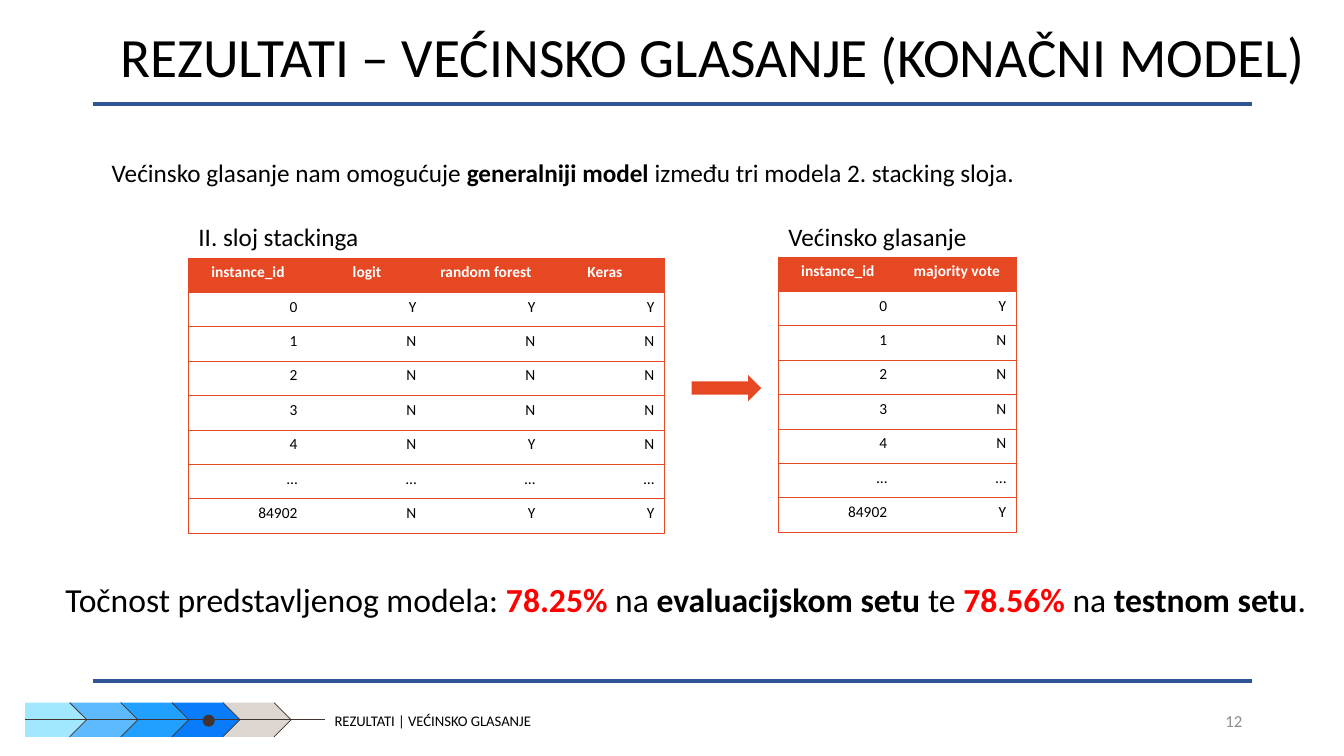
"""Build the slide on the majority-vote final model."""
from lxml import etree
from pptx import Presentation
from pptx import util as u
from pptx.dml.color import RGBColor
from pptx.enum import shapes, text
from pptx.oxml.ns import qn

FONT = "Calibri"
BLACK, RED, BLUE, ORANGE, DARK = "000000", "FF0000", "2F5597", "E64823", "41342F"
KIND, ALIGN, ANCHOR = shapes.MSO_SHAPE, text.PP_ALIGN, text.MSO_ANCHOR

TITLE = "REZULTATI – VEĆINSKO GLASANJE (KONAČNI MODEL)"
INTRO = [("Većinsko glasanje nam omogućuje ", BLACK, False),
         ("generalniji model ", BLACK, True),
         ("između tri modela 2. stacking sloja.", BLACK, False)]
ACCURACY = [("Točnost predstavljenog modela: ", BLACK, False),
            ("78.25%", RED, True), (" na ", BLACK, False),
            ("evaluacijskom setu ", BLACK, True), ("te ", BLACK, False),
            ("78.56%", RED, True), (" na ", BLACK, False),
            ("testnom setu", BLACK, True), (".", BLACK, False)]
IDS = ["0", "1", "2", "3", "4", "…", "84902"]
TABLES = [
    ("II. sloj stackinga", 1.87, 2.56, 1.8,
     {"instance_id": IDS, "logit": "YNNNN…N",
      "random forest": "YNNNY…Y", "Keras": "YNNNN…Y"}),
    ("Većinsko glasanje", 7.72, 2.55, 1.99,
     {"instance_id": IDS, "majority vote": "YNNNN…Y"}),
]
COL_W, TABLE_H = 1.18, 2.73
STEPS = ["5DBAFF", "21A0FF", "097CFB", "DCD5D0"]
STEP_X, STEP_PITCH, STEP_Y, STEP_W, STEP_H = 0.69, 0.507, 6.97, 0.68, 0.34

prs = Presentation()
prs.slide_width, prs.slide_height = u.Inches(13.33), u.Inches(7.5)
s = prs.slides.add_slide(prs.slide_layouts[6])


def rgb(value):
    return RGBColor.from_string(value)


def inches(*values):
    return [u.Inches(v) for v in values]


def add_line(x1, y1, x2, y2, color, width):
    sp = s.shapes.add_connector(shapes.MSO_CONNECTOR.STRAIGHT, *inches(x1, y1, x2, y2))
    sp.line.color.rgb, sp.line.width = rgb(color), u.Pt(width)
    etree.SubElement(sp._element.spPr, qn("a:effectLst"))


def add_shape(kind, x, y, w, h, color):
    sp = s.shapes.add_shape(kind, *inches(x, y, w, h))
    sp.shadow.inherit = False
    sp.fill.solid()
    sp.fill.fore_color.rgb = rgb(color)
    sp.line.fill.background()


def add_text(box, runs, size, align=ALIGN.LEFT, anchor=ANCHOR.TOP, wrap=False, spacing=1.0):
    tf = s.shapes.add_textbox(*inches(*box)).text_frame
    tf.word_wrap, tf.vertical_anchor = wrap, anchor
    p = tf.paragraphs[0]
    p.alignment, p.line_spacing = align, spacing
    p.font.size, p.font.name = u.Pt(size), FONT
    for words, color, bold in runs:
        r = p.add_run()
        r.text, r.font.bold, r.font.color.rgb = words, bold, rgb(color)


def set_borders(cell, left, right):
    tcPr = cell._tc.get_or_add_tcPr()
    sides = {"L": left, "R": right, "T": True, "B": True}
    for i, (side, shown) in enumerate(sides.items()):
        ln = etree.Element(qn("a:ln" + side), w=str(u.Pt(0.5)))
        if shown:
            fill = etree.SubElement(ln, qn("a:solidFill"))
            etree.SubElement(fill, qn("a:srgbClr"), val=ORANGE)
        else:
            etree.SubElement(ln, qn("a:noFill"))
        tcPr.insert(i, ln)


def add_table(x, y, columns):
    n = len(columns)
    table = s.shapes.add_table(len(IDS) + 1, n, *inches(x, y, n * COL_W, TABLE_H)).table
    for c, (head, values) in enumerate(columns.items()):
        for r, value in enumerate([head, *values]):
            cell, is_head = table.cell(r, c), r == 0
            cell.text = value
            p = cell.text_frame.paragraphs[0]
            p.alignment = ALIGN.CENTER if is_head else ALIGN.RIGHT
            p.font.size, p.font.name, p.font.bold = u.Pt(11), FONT, is_head
            p.font.color.rgb = rgb("FFFFFF" if is_head else BLACK)
            if is_head:
                cell.fill.solid()
                cell.fill.fore_color.rgb = rgb(ORANGE)
            else:
                cell.fill.background()
            set_borders(cell, c == 0, c == n - 1)


for y in (1.03, 6.76):
    add_line(0.92, y, 12.42, y, BLUE, 3)
add_text((0.92, 0.15, 12.3, 0.88), [(TITLE, BLACK, False)], 39.6,
         ALIGN.CENTER, ANCHOR.MIDDLE, True, 0.9)
add_text((9.42, 6.95, 3, 0.4), [("12", "8C8C8C", False)], 12,
         ALIGN.RIGHT, ANCHOR.MIDDLE, True)

add_shape(KIND.PENTAGON, 0.25, STEP_Y, 0.61, STEP_H, "A1E7FF")
for i, color in enumerate(STEPS):
    add_shape(KIND.CHEVRON, STEP_X + i * STEP_PITCH, STEP_Y, STEP_W, STEP_H, color)
middle = STEP_Y + STEP_H / 2
for i in range(len(STEPS) + 1):
    x = STEP_X + i * STEP_PITCH
    for edge in (STEP_Y, STEP_Y + STEP_H):
        add_line(x, edge, x + STEP_H / 2, middle, DARK, 0.5)
add_line(0.25, middle, 3.22, middle, DARK, 0.5)
add_shape(KIND.OVAL, 2.01, 7.09, 0.12, 0.12, DARK)
add_text((3.22, 7.01, 2.36, 0.45), [("REZULTATI | VEĆINSKO GLASANJE", BLACK, False)],
         10.5, wrap=True)

add_text((1.01, 1.51, 9.24, 0.4), INTRO, 18)
add_text((0.55, 5.69, 12.62, 0.5), ACCURACY, 24)
for caption, x, y, w, columns in TABLES:
    add_table(x, y, columns)
    add_text((x, 2.15, w, 0.4), [(caption, BLACK, False)], 18)
add_shape(KIND.RIGHT_ARROW, 6.86, 3.72, 0.69, 0.26, ORANGE)

prs.save("out.pptx")
